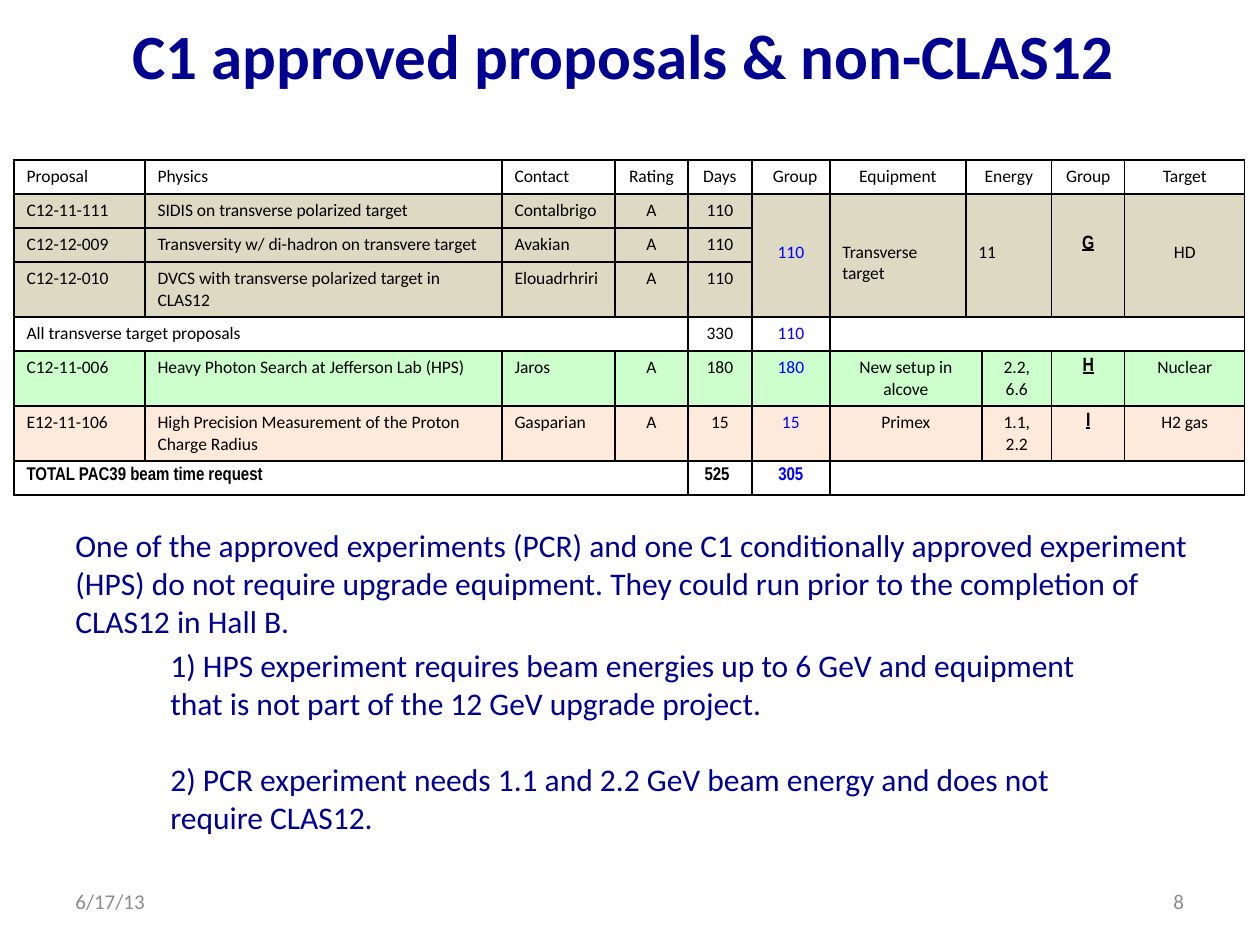
from lxml.etree import SubElement
from pptx import Presentation
from pptx.dml.color import RGBColor as RGB
from pptx.enum.text import MSO_ANCHOR as ANCHOR, PP_ALIGN as ALIGN
from pptx.oxml.ns import qn
from pptx.util import Emu, Pt

THEME = {
    "navy": RGB(0x00, 0x00, 0x90),
    "grey": RGB(0x8C, 0x8C, 0x8C),
    "black": RGB(0, 0, 0),
    "blue": RGB(0x00, 0x00, 0xFF),
    "white": RGB(0xFF, 0xFF, 0xFF),
    "tan": RGB(0xDD, 0xD9, 0xC3),
    "green": RGB(0xCC, 0xFF, 0xCC),
    "peach": RGB(0xFD, 0xEA, 0xDA),
    "title": {"name": "Calibri", "size": Pt(36), "bold": True},
    "body": {"name": "Calibri", "size": Pt(18)},
    "footer": {"name": "Calibri", "size": Pt(12)},
    "entry": {"name": "Calibri", "size": Pt(10), "bold": False},
    "group": {"name": "Arial Narrow", "size": Pt(11), "bold": True, "underline": True},
    "total": {"name": "Arial Narrow", "size": Pt(10.5), "bold": True},
}


def px(length):
    return Emu(round(length * 914400 / 126))


def write(paragraph, text, style, color, align):
    paragraph.alignment = align
    run = paragraph.add_run()
    run.text = text
    for attribute, value in THEME[style].items():
        setattr(run.font, attribute, value)
    run.font.color.rgb = THEME[color]


deck = Presentation()
deck.slide_width, deck.slide_height = px(1260), px(945)
slide = deck.slides.add_slide(deck.slide_layouts[6])

# Proposal table: fill of the row, then its entries from left to right
proposals = [
    ("white", ["Proposal", "Physics", "Contact", "Rating", "Days", "Group",
               "Equipment", "Energy", "", "Group", "Target"]),
    ("tan", ["C12-11-111", "SIDIS on transverse polarized target", "Contalbrigo", "A", "110",
             "110", "Transverse target", "11", "", "G", "HD"]),
    ("tan", ["C12-12-009", "Transversity w/ di-hadron on transvere target", "Avakian", "A", "110"]),
    ("tan", ["C12-12-010", "DVCS with transverse polarized target in CLAS12", "Elouadrhriri",
             "A", "110"]),
    ("white", ["All transverse target proposals", "", "", "", "330", "110"]),
    ("green", ["C12-11-006", "Heavy Photon Search at Jefferson Lab (HPS)", "Jaros", "A", "180",
               "180", "New setup in alcove", "", "2.2, 6.6", "H", "Nuclear"]),
    ("peach", ["E12-11-106", "High Precision Measurement of the Proton Charge Radius",
               "Gasparian", "A", "15", "15", "Primex", "", "1.1, 2.2", "I", "H2 gas"]),
    ("white", ["TOTAL PAC39 beam time request", "", "", "", " 525", "305"]),
]
column_widths = [131, 357, 113, 73, 64, 78, 136, 16, 70, 73, 120]
row_heights = [34, 34, 34, 55, 34, 55, 55, 34]
# First row, first column, last row, last column
merges = [(0, 7, 0, 8), (1, 5, 3, 5), (1, 6, 3, 6), (1, 7, 3, 8), (1, 9, 3, 9), (1, 10, 3, 10),
          (4, 0, 4, 3), (4, 6, 4, 10), (5, 6, 5, 7), (6, 6, 6, 7), (7, 0, 7, 3), (7, 6, 7, 10)]
special_aligns = {(0, 5): ALIGN.RIGHT, (1, 6): ALIGN.LEFT, (1, 7): ALIGN.LEFT, (7, 4): ALIGN.LEFT}
group_column, days_column, total_row = 9, 5, len(proposals) - 1

table = slide.shapes.add_table(len(row_heights), len(column_widths), px(14), px(160),
                               px(sum(column_widths)), px(sum(row_heights))).table
table.first_row = table.horz_banding = False
for column, width in zip(table.columns, column_widths):
    column.width = px(width)
for row, height in zip(table.rows, row_heights):
    row.height = px(height)
for top, left, bottom, right in merges:
    table.cell(top, left).merge(table.cell(bottom, right))

for r, (fill, entries) in enumerate(proposals):
    for c in range(len(column_widths)):
        cell = table.cell(r, c)
        paragraph = cell.text_frame.paragraphs[0]
        style = "total" if r == total_row else "group" if r and c == group_column else "entry"
        if c < len(entries) and entries[c]:
            color = "blue" if r and c == days_column else "black"
            align = special_aligns.get((r, c), ALIGN.LEFT if c < 3 else ALIGN.CENTER)
            write(paragraph, entries[c], style, color, align)
        SubElement(paragraph._p, qn("a:endParaRPr"), sz="1000")
        if r == 1 and c >= days_column:
            cell.margin_top = px(41 if c == group_column else 48)

        properties = cell._tc.get_or_add_tcPr()
        for side in ("L", "R", "T", "B"):
            hairline = r == total_row and (side, c) in (("R", 3), ("L", 4))
            border = SubElement(properties, qn(f"a:ln{side}"), w=str(Pt(0.25 if hairline else 1)))
            paint = SubElement(border, qn("a:solidFill"))
            SubElement(paint, qn("a:srgbClr"), val=str(THEME["black"]))
        if r == total_row:
            cell.fill.background()
        else:
            cell.fill.solid()
            cell.fill.fore_color.rgb = THEME[fill]

# Title, body and footer: box, style, colour, alignment, anchor, right inset, paragraphs
texts = [
    ((0, 10, 1260, 89), "title", "navy", ALIGN.CENTER, ANCHOR.TOP, 26,
     ["C1 approved proposals & non-CLAS12"]),
    ((63, 876, 294, 50), "footer", "grey", ALIGN.LEFT, ANCHOR.MIDDLE, 13, ["6/17/13"]),
    ((903, 876, 294, 50), "footer", "grey", ALIGN.RIGHT, ANCHOR.MIDDLE, 13, ["8"]),
    ((158, 640, 966, 204), "body", "navy", ALIGN.LEFT, ANCHOR.TOP, 13,
     ["1) HPS experiment requires beam energies up to 6 GeV and equipment that is not part of "
      "the 12 GeV upgrade project.",
      "2) PCR experiment needs 1.1 and 2.2 GeV beam energy and does not require CLAS12."]),
    ((63, 520, 1166, 127), "body", "navy", ALIGN.LEFT, ANCHOR.TOP, 13,
     ["One of the approved experiments (PCR) and one C1 conditionally approved experiment (HPS) "
      "do not require upgrade equipment. They could run prior to the completion of CLAS12 in "
      "Hall B."]),
]
for box, style, color, align, anchor, right_inset, lines in texts:
    frame = slide.shapes.add_textbox(*map(px, box)).text_frame
    frame.word_wrap = True
    frame.vertical_anchor = anchor
    frame.margin_right = px(right_inset)
    for i, line in enumerate(lines):
        paragraph = frame.add_paragraph() if i else frame.paragraphs[0]
        write(paragraph, line, style, color, align)
        if i:
            paragraph.space_before = Pt(22)

deck.save("out.pptx")
